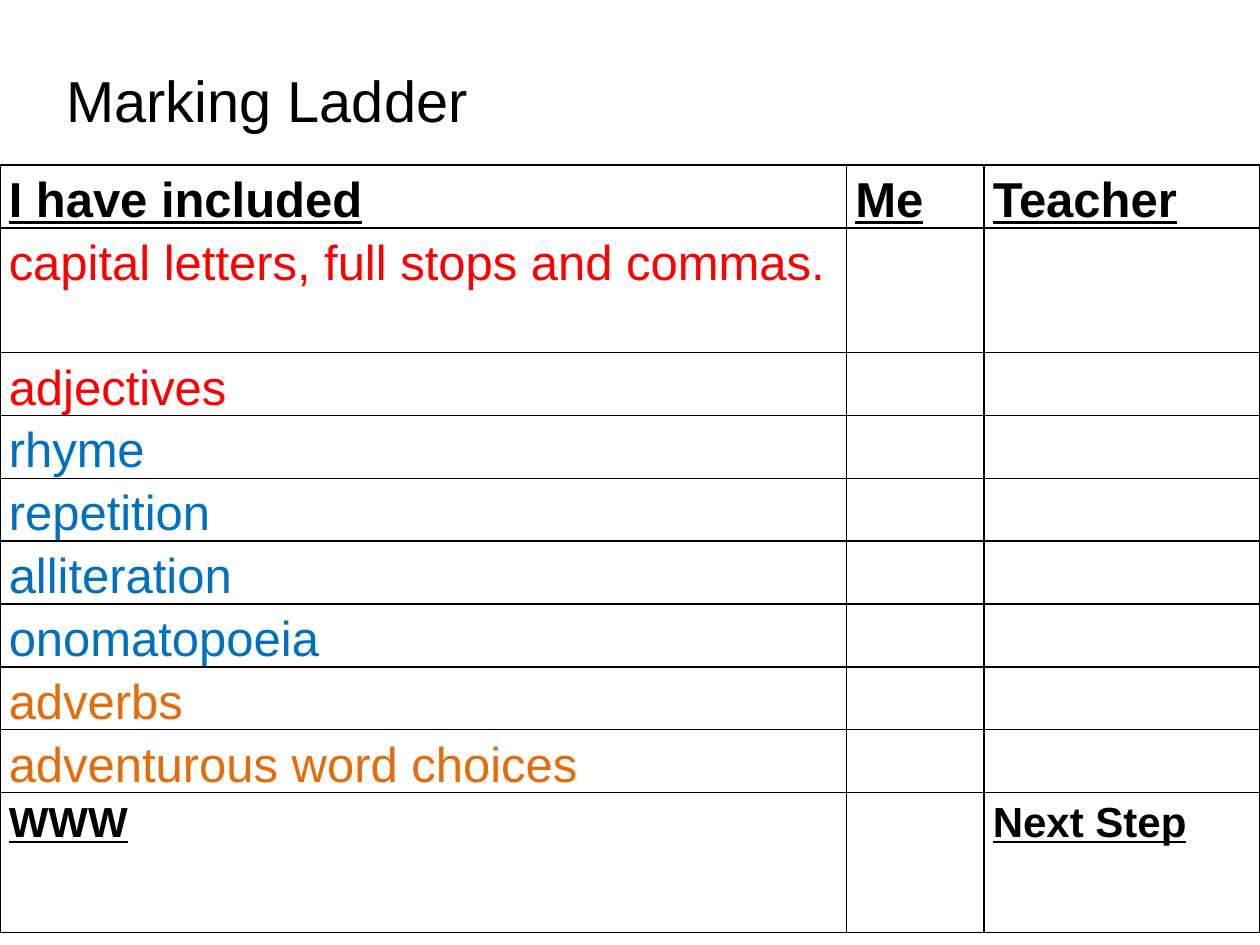
from dataclasses import dataclass

from lxml.etree import SubElement
from pptx import Presentation
from pptx.dml.color import RGBColor
from pptx.enum.text import MSO_ANCHOR
from pptx.oxml.ns import qn
from pptx.util import Inches, Pt

BLACK, RED, BLUE, ORANGE = "000000", "FF0000", "0070C0", "E46C0A"


@dataclass
class Row:
    texts: tuple
    color: str = BLACK
    size: int = 28
    head: bool = False
    tall: float = 0.49


ROWS = [
    Row(("I have included", "Me", "Teacher"), head=True),
    Row(("capital letters, full stops and commas.", "", ""), RED, tall=0.99),
    Row(("adjectives", "", ""), RED),
    *(Row((word, "", ""), BLUE)
      for word in ("rhyme", "repetition", "alliteration", "onomatopoeia")),
    *(Row((word, "", ""), ORANGE)
      for word in ("adverbs", "adventurous word choices")),
    Row(("WWW", "", "Next Step"), size=24, head=True, tall=1.11),
]
WIDTHS = (6.72, 1.09, 2.19)


def tint(color: str) -> RGBColor:
    return RGBColor.from_string(color)


def write(para, text: str, color: str, line: float, **form) -> None:
    para.line_spacing = line
    run = para.add_run()
    run.text = text
    run.font.color.rgb = tint(color)
    for name, value in {"name": "Arial", **form}.items():
        setattr(run.font, name, value)


def edge(cell) -> None:
    """Put a thin black line on each side of a cell."""
    props = cell._tc.get_or_add_tcPr()
    for side in ("a:lnL", "a:lnR", "a:lnT", "a:lnB"):
        line = SubElement(props, qn(side), w=str(Pt(1)))
        fill = SubElement(line, qn("a:solidFill"))
        SubElement(fill, qn("a:srgbClr"), val=BLACK)


def draw_cell(cell, text: str, row: Row) -> None:
    form = {"margin_left": Inches(0.07), "margin_right": Inches(0.07),
            "margin_top": 0, "margin_bottom": 0}
    for name, value in form.items():
        setattr(cell, name, value)
    edge(cell)
    cell.fill.background()
    if text:
        write(cell.text_frame.paragraphs[0], text, row.color, 1.15,
              size=Pt(row.size), bold=row.head, underline=row.head)


def draw_table(slide) -> None:
    frame = slide.shapes.add_table(
        len(ROWS), len(WIDTHS), 0, Inches(1.31), Inches(sum(WIDTHS)),
        Inches(sum(row.tall for row in ROWS)))
    table = frame.table
    table.first_row = table.horz_banding = False
    for col, width in zip(table.columns, WIDTHS):
        col.width = Inches(width)
    for line, row in zip(table.rows, ROWS):
        line.height = Inches(row.tall)
        for cell, text in zip(line.cells, row.texts):
            draw_cell(cell, text, row)


def draw_title(slide) -> None:
    box = slide.shapes.add_textbox(
        Inches(0.43), Inches(0.29), Inches(9), Inches(1.06))
    frame = box.text_frame
    frame.word_wrap = True
    frame.vertical_anchor = MSO_ANCHOR.MIDDLE
    write(frame.paragraphs[0], "Marking Ladder", BLACK, 0.9, size=Pt(33))


def main() -> None:
    deck = Presentation()
    deck.slide_width, deck.slide_height = Inches(10), Inches(7.5)
    slide = deck.slides.add_slide(deck.slide_layouts[6])
    # Checklist, then its heading
    draw_table(slide)
    draw_title(slide)
    deck.save("out.pptx")


if __name__ == "__main__":
    main()
